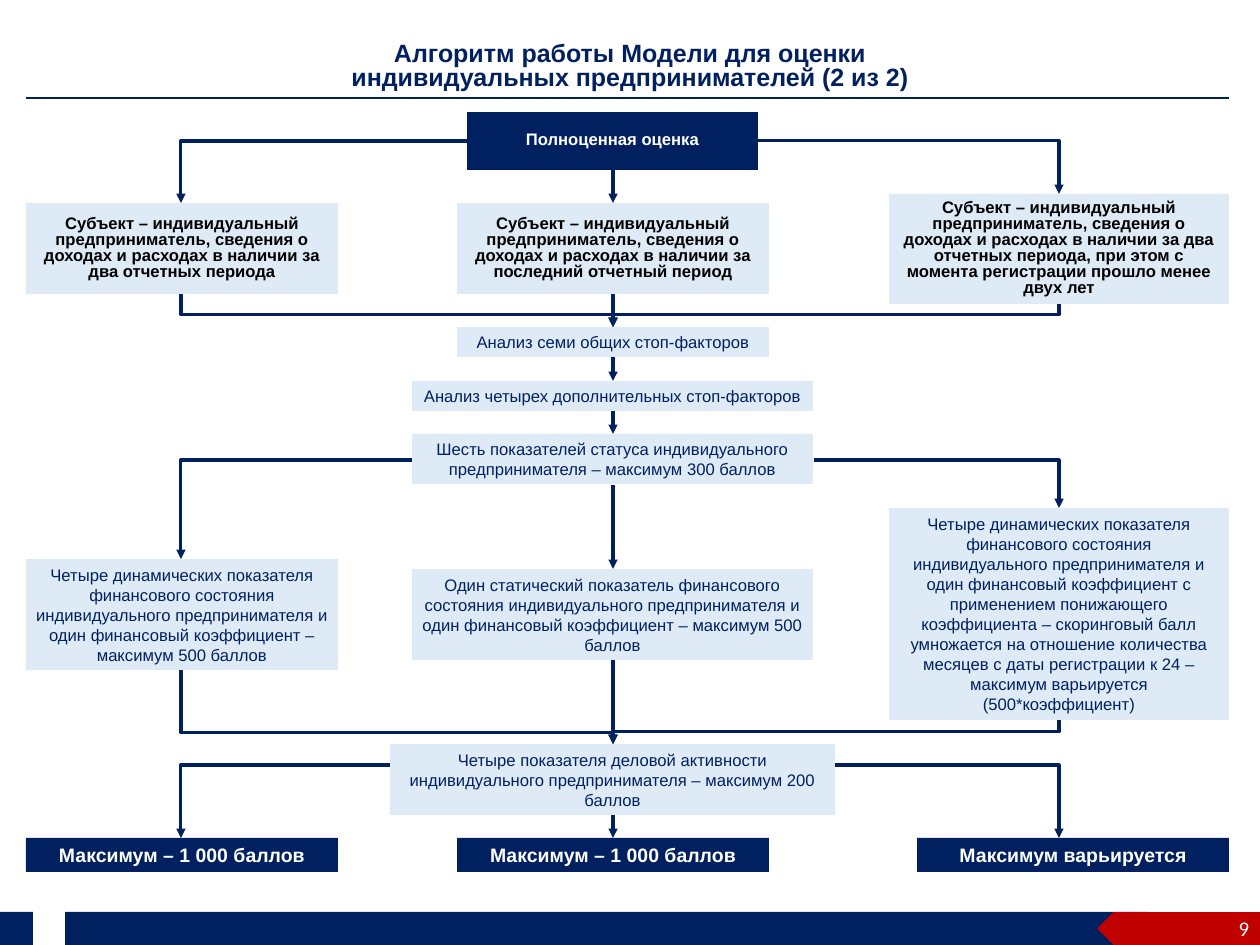
from lxml import etree
from pptx import Presentation
from pptx.dml.color import RGBColor
from pptx.enum.shapes import MSO_CONNECTOR, MSO_SHAPE
from pptx.enum.text import MSO_ANCHOR, PP_ALIGN
from pptx.oxml.ns import qn
from pptx.util import Inches, Pt

NAVY = RGBColor(0x00, 0x20, 0x60)
PALE = RGBColor(0xDE, 0xEB, 0xF7)
RED = RGBColor(0xC0, 0x00, 0x00)
BLACK = RGBColor(0x00, 0x00, 0x00)
WHITE = RGBColor(0xFF, 0xFF, 0xFF)
STRAIGHT, ELBOW = MSO_CONNECTOR.STRAIGHT, MSO_CONNECTOR.ELBOW
RECT, PENTAGON = MSO_SHAPE.RECTANGLE, MSO_SHAPE.PENTAGON
CENTER, RIGHT = PP_ALIGN.CENTER, PP_ALIGN.RIGHT
TOP, MIDDLE = MSO_ANCHOR.TOP, MSO_ANCHOR.MIDDLE

LEFT_X, MID_X, RIGHT_X = 1.81, 6.13, 10.59

prs = Presentation()
prs.slide_width = Inches(12.6)
prs.slide_height = Inches(9.45)
s = prs.slides.add_slide(prs.slide_layouts[6])


def add_line(kind, x1, y1, x2, y2, width=2.25, arrow=True):
    line = s.shapes.add_connector(kind, Inches(x1), Inches(y1), Inches(x2), Inches(y2))
    line.line.color.rgb = NAVY
    line.line.width = Pt(width)
    if arrow:
        etree.SubElement(line.line._get_or_add_ln(), qn("a:tailEnd"), type="triangle")
    etree.SubElement(line._element.spPr, qn("a:effectLst"))
    return line


def write(sp, text, size, color, bold=False, align=CENTER, anchor=MIDDLE, spacing=1.0, font="Arial"):
    tf = sp.text_frame
    tf.word_wrap = True
    tf.vertical_anchor = anchor
    tf.text = text
    p = tf.paragraphs[0]
    p.alignment = align
    p.line_spacing = spacing
    for r in p.runs:
        r.font.name = font
        r.font.size = Pt(size)
        r.font.bold = bold
        r.font.color.rgb = color


title = s.shapes.add_textbox(0, Inches(0.38), prs.slide_width, Inches(0.59))
write(title, "Алгоритм работы Модели для оценки\vиндивидуальных предпринимателей (2 из 2)",
      18, NAVY, bold=True, anchor=TOP, spacing=0.8)
add_line(STRAIGHT, 0.26, 0.98, 12.29, 0.98, width=1.75, arrow=False)

footer = [
    (RECT, 0, 0.33, NAVY),
    (RECT, 0.65, 10.82, NAVY),
    (PENTAGON, 10.97, 1.63, RED),
]
for kind, x, w, color in footer:
    sp = s.shapes.add_shape(kind, Inches(x), Inches(9.12), Inches(w), Inches(0.33))
    sp.shadow.inherit = False
    sp.fill.solid()
    sp.fill.fore_color.rgb = color
    sp.line.fill.background()
    if kind == PENTAGON:
        sp.rotation = 180
number = s.shapes.add_textbox(Inches(9.76), Inches(9.03), Inches(2.83), Inches(0.5))
write(number, "9", 15, WHITE, align=RIGHT, font="Calibri")

down_arrows = [(1.7, 2.03), (2.94, 3.27), (3.57, 3.81), (4.11, 4.34),
               (4.85, 5.69), (6.6, 7.44), (8.07, 8.38)]
for y1, y2 in down_arrows:
    add_line(STRAIGHT, MID_X, y1, MID_X, y2)

branches = [
    (4.67, 1.41, LEFT_X, 2.03),
    (7.58, 1.41, RIGHT_X, 1.94),
    (4.12, 4.6, LEFT_X, 5.59),
    (8.14, 4.6, RIGHT_X, 5.08),
    (4.12, 7.65, LEFT_X, 8.38),
    (8.35, 7.65, RIGHT_X, 8.38),
]
for x1, y1, x2, y2 in branches:
    branch = add_line(ELBOW, x1, y1, x2, y2)
    branch._element.spPr.find(qn("a:prstGeom")).set("prst", "bentConnector2")

merges = [
    (LEFT_X, 2.94, 3.27, 0.63),
    (RIGHT_X, 3.03, 3.27, 0.5),
    (LEFT_X, 6.7, 7.44, 0.85),
    (RIGHT_X, 7.2, 7.44, 0.5),
]
for x, y1, y2, bend in merges:
    w, h = y2 - y1, abs(MID_X - x)
    cx, cy = (x + MID_X) / 2, (y1 + y2) / 2
    merge = add_line(ELBOW, cx - w / 2, cy - h / 2, cx + w / 2, cy + h / 2)
    xfrm = merge._element.spPr.find(qn("a:xfrm"))
    xfrm.set("rot", str((270 if x < MID_X else 90) * 60000))
    if x < MID_X:
        xfrm.set("flipH", "1")
    guides = merge._element.spPr.find(qn("a:prstGeom")).find(qn("a:avLst"))
    etree.SubElement(guides, qn("a:gd"), name="adj1", fmla=f"val {round(bend * 100000)}")

STYLES = {
    "start": (NAVY, 12, WHITE, True, 0.8),
    "subject": (PALE, 12, BLACK, True, 0.8),
    "step": (PALE, 12, NAVY, False, 1.0),
    "result": (NAVY, 14, WHITE, True, 1.0),
}
SUBJECT = "Субъект – индивидуальный предприниматель, сведения о доходах и расходах в наличии за "
DYNAMIC = ("Четыре динамических показателя финансового состояния индивидуального "
           "предпринимателя и один финансовый коэффициент ")
boxes = [
    ("start", 4.67, 1.12, 2.91, 0.58, "Полноценная оценка"),
    ("subject", 0.26, 2.03, 3.12, 0.91, SUBJECT + "два отчетных периода"),
    ("subject", 4.57, 2.03, 3.12, 0.91, SUBJECT + "последний отчетный период"),
    ("subject", 8.89, 1.94, 3.4, 1.1,
     SUBJECT + "два отчетных периода, при этом с момента регистрации прошло менее двух лет"),
    ("step", 4.57, 3.27, 3.12, 0.3, "Анализ семи общих стоп-факторов"),
    ("step", 4.12, 3.81, 4.01, 0.3, "Анализ четырех дополнительных стоп-факторов"),
    ("step", 4.12, 4.34, 4.01, 0.5,
     "Шесть показателей статуса индивидуального предпринимателя – максимум 300 баллов"),
    ("step", 0.26, 5.59, 3.12, 1.11, DYNAMIC + "– максимум 500 баллов"),
    ("step", 4.12, 5.69, 4.01, 0.91,
     "Один статический показатель финансового состояния индивидуального предпринимателя "
     "и один финансовый коэффициент – максимум 500 баллов"),
    ("step", 8.89, 5.08, 3.4, 2.12,
     DYNAMIC + "с применением понижающего коэффициента – скоринговый балл умножается на "
     "отношение количества месяцев с даты регистрации к 24 – максимум варьируется "
     "(500*коэффициент)"),
    ("step", 3.9, 7.44, 4.45, 0.71,
     "Четыре показателя деловой активности индивидуального предпринимателя – "
     "максимум 200 баллов"),
    ("result", 0.26, 8.38, 3.12, 0.34, "Максимум – 1 000 баллов"),
    ("result", 4.57, 8.38, 3.12, 0.34, "Максимум – 1 000 баллов"),
    ("result", 9.17, 8.38, 3.12, 0.34, "Максимум варьируется"),
]
for style, x, y, w, h, text in boxes:
    fill, size, color, bold, spacing = STYLES[style]
    sp = s.shapes.add_shape(RECT, Inches(x), Inches(y), Inches(w), Inches(h))
    sp.shadow.inherit = False
    sp.fill.solid()
    sp.fill.fore_color.rgb = fill
    sp.line.fill.background()
    write(sp, text, size, color, bold=bold, spacing=spacing)

prs.save("out.pptx")
